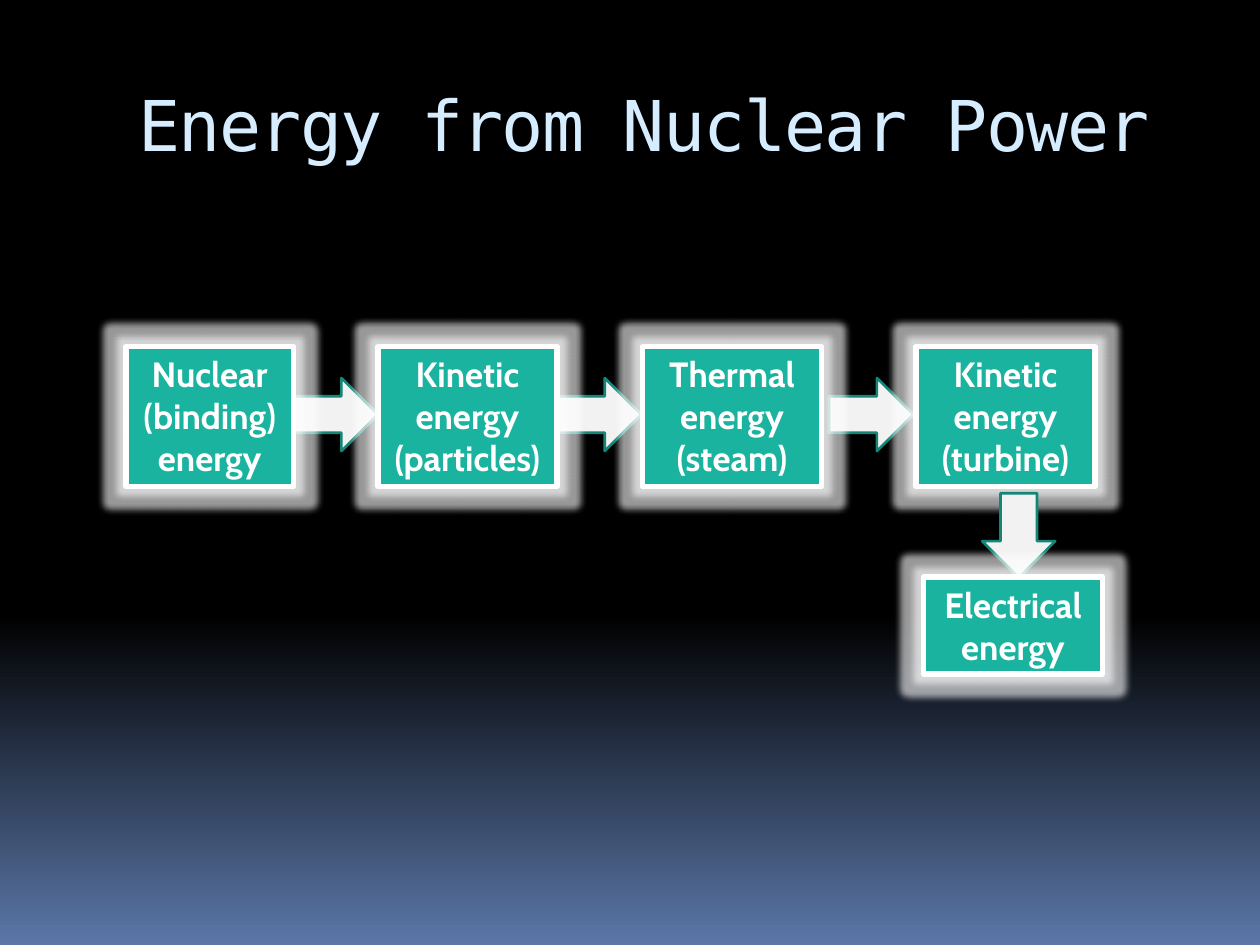
from lxml import etree
from pptx import Presentation
from pptx.dml.color import RGBColor
from pptx.enum.shapes import MSO_SHAPE as Shape
from pptx.enum.text import MSO_ANCHOR as Anchor, MSO_AUTO_SIZE as AutoSize, PP_ALIGN as Align
from pptx.oxml import parse_xml
from pptx.oxml.ns import nsdecls, qn
from pptx.util import Inches, Pt


def color(value):
    return RGBColor.from_string(value)


class EnergySlide:
    title_font = "DejaVu Sans Mono"
    body_font = "Cabin"
    title_color = "D6ECFF"
    box_fill = "1AB39F"
    arrow_fill = "F2F2F2"
    arrow_line = "138677"
    white = "FFFFFF"

    def __init__(self, presentation):
        self.slide = presentation.slides.add_slide(presentation.slide_layouts[5])

    def background(self, stops, angle):
        fill = self.slide.background.fill
        fill.gradient()
        fill.gradient_angle = angle
        for stop, (position, value) in zip(fill.gradient_stops, stops):
            stop.position = position
            stop.color.rgb = color(value)

    def style_text(self, paragraph, font, size, value, bold, align):
        paragraph.alignment = align
        paragraph.font.name = font
        paragraph.font.size = Pt(size)
        paragraph.font.bold = bold
        paragraph.font.color.rgb = color(value)

    def title(self, text, left, top, width, height):
        shape = self.slide.shapes.title
        shape.left, shape.top = Inches(left), Inches(top)
        shape.width, shape.height = Inches(width), Inches(height)
        frame = shape.text_frame
        frame.text = text
        frame.vertical_anchor = Anchor.TOP
        frame.margin_top = Inches(0.09)
        paragraph = frame.paragraphs[0]
        self.style_text(paragraph, self.title_font, 40, self.title_color, False, Align.LEFT)
        paragraph.runs[0]._r.get_or_add_rPr().set("spc", "-100")

    def shape(self, kind, left, top, width, height, fill, line, line_width):
        shape = self.slide.shapes.add_shape(
            kind, Inches(left), Inches(top), Inches(width), Inches(height))
        shape.shadow.inherit = False
        shape.fill.solid()
        shape.fill.fore_color.rgb = color(fill)
        shape.line.color.rgb = color(line)
        shape.line.width = Pt(line_width)
        return shape

    def arrow(self, left, top, rotation=0):
        shape = self.shape(Shape.RIGHT_ARROW, left, top, 0.67, 0.58,
                           self.arrow_fill, self.arrow_line, 1.5)
        shape.rotation = rotation

    def glow(self, shape, radius, alpha):
        effects = shape._element.spPr.find(qn("a:effectLst"))
        effects.append(parse_xml(
            f'<a:glow {nsdecls("a")} rad="{Pt(radius)}"><a:srgbClr val="{self.white}">'
            f'<a:alpha val="{alpha * 1000}"/></a:srgbClr></a:glow>'))

    def box(self, text, left, top, width, height):
        shape = self.shape(Shape.RECTANGLE, left, top, width, height,
                           self.box_fill, self.white, 3)
        self.glow(shape, 8, 60)
        frame = shape.text_frame
        frame.text = text
        frame.word_wrap = True
        frame.auto_size = AutoSize.SHAPE_TO_FIT_TEXT
        frame.vertical_anchor = Anchor.TOP
        self.style_text(frame.paragraphs[0], self.body_font, 20, self.white, True, Align.CENTER)


def main():
    presentation = Presentation()
    presentation.slide_width, presentation.slide_height = Inches(10), Inches(7.5)
    energy = EnergySlide(presentation)
    energy.background([(0.65, "000000"), (1, "5B77A8")], 270)
    energy.title("Energy from Nuclear Power", 1, 0.56, 8.5, 1)

    for left in (2.33, 4.42, 6.58):
        energy.arrow(left, 3)

    stages = [
        ("Nuclear (binding) energy", 1, 1.33),
        ("Kinetic energy (particles)", 3, 1.42),
        ("Thermal energy (steam)", 5.1, 1.42),
        ("Kinetic energy (turbine)", 7.27, 1.42),
    ]
    for text, left, width in stages:
        energy.box(text, left, 2.75, width, 1.11)

    energy.arrow(7.75, 3.96, 90)
    energy.box("Electrical\venergy", 7.33, 4.58, 1.42, 0.77)
    presentation.save("out.pptx")


if __name__ == "__main__":
    main()
